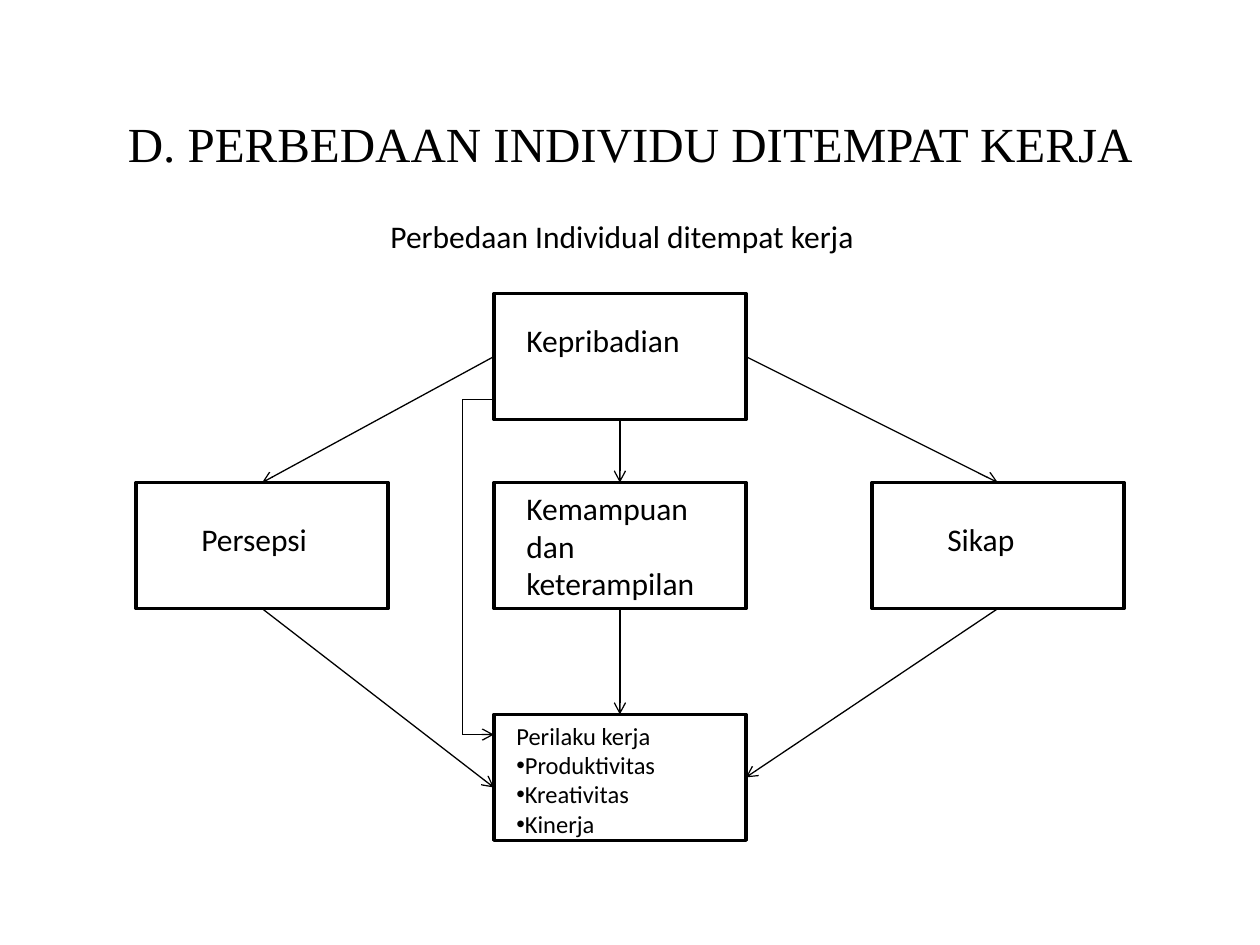
"""Build a slide on individual differences at work."""
from typing import NamedTuple, Optional

from lxml.etree import SubElement as Sub
from pptx import Presentation as Deck
from pptx.dml.color import RGBColor as Color
from pptx.enum.shapes import MSO_CONNECTOR as Wire, MSO_SHAPE as Form
from pptx.enum.text import MSO_ANCHOR as Anchor, PP_ALIGN as Align
from pptx.oxml.ns import qn
from pptx.util import Inches, Pt

BLACK = Color(0, 0, 0)
WHITE = Color(255, 255, 255)
WIDE, HIGH = 2, 1
TOP, LEFT, LOW, RIGHT = range(4)


class Box(NamedTuple):
    x: float
    y: float


class Label(NamedTuple):
    x: float
    y: float
    width: float
    height: float
    lines: tuple[str, ...]
    size: int = 18


class End(NamedTuple):
    x: float
    y: float
    box: Optional[str] = None
    side: int = TOP


class Link(NamedTuple):
    start: End
    stop: End
    arrow: bool = True


BOXES = {
    "trait": Box(3.92, 2.33),
    "view": Box(1.08, 3.83),
    "skill": Box(3.92, 3.83),
    "stance": Box(6.92, 3.83),
    "work": Box(3.92, 5.67),
}
LABELS = (
    Label(3, 1.67, 4.08, 0.4, ("Perbedaan Individual ditempat kerja",)),
    Label(4.08, 2.5, 1.67, 0.4, ("Kepribadian",)),
    Label(4.08, 3.83, 1.67, 1.01, ("Kemampuan dan keterampilan",)),
    Label(1.5, 4.08, 1.5, 0.4, ("Persepsi",)),
    Label(7.42, 4.08, 1.5, 0.4, ("Sikap",)),
    Label(4, 5.67, 1.83, 1.04,
          ("Perilaku kerja", "Produktivitas", "Kreativitas", "Kinerja"), 14),
)


def side(name: str, edge: int) -> End:
    box = BOXES[name]
    shift = ((WIDE / 2, 0), (0, HIGH / 2), (WIDE / 2, HIGH), (WIDE, HIGH / 2))
    across, down = shift[edge]
    return End(box.x + across, box.y + down, name, edge)


BEND, EDGE = 3.67, BOXES["work"].x
LINKS = (
    Link(side("trait", LEFT), side("view", TOP)),
    Link(side("trait", RIGHT), side("stance", TOP)),
    Link(side("trait", LOW), side("skill", TOP)),
    Link(side("skill", LOW), side("work", TOP)),
    Link(side("view", LOW), End(EDGE, 6.25)),
    Link(side("stance", LOW), side("work", RIGHT)),
    Link(End(BEND, 5.83), End(EDGE, 5.83)),
    Link(End(BEND, 3.17), End(BEND, 5.83), False),
    Link(End(BEND, 3.17), End(EDGE, 3.17), False),
)


def write(para, text: str, size: int, font: str) -> None:
    run = para.add_run()
    run.text = text
    run.font.size = Pt(size)
    run.font.name = font
    run.font.color.rgb = BLACK


def draw_box(slide, box: Box):
    shape = slide.shapes.add_shape(
        Form.RECTANGLE, *map(Inches, (box.x, box.y, WIDE, HIGH)))
    shape.shadow.inherit = False
    shape.fill.solid()
    shape.fill.fore_color.rgb = WHITE
    shape.line.color.rgb = BLACK
    shape.line.width = Pt(2)
    return shape


def draw_label(slide, label: Label) -> None:
    frame = slide.shapes.add_textbox(*map(Inches, label[:4])).text_frame
    frame.word_wrap = True
    for rank, text in enumerate(label.lines):
        para = frame.add_paragraph() if rank else frame.paragraphs[0]
        if rank:
            props = para._p.get_or_add_pPr()
            Sub(props, qn("a:buFont"), typeface="Arial")
            Sub(props, qn("a:buChar"), char="•")
        write(para, text, label.size, "Calibri")


def draw_link(slide, link: Link, shapes: dict) -> None:
    start, stop = link.start, link.stop
    line = slide.shapes.add_connector(
        Wire.STRAIGHT, *map(Inches, (start.x, start.y, stop.x, stop.y)))
    if start.box:
        line.begin_connect(shapes[start.box], start.side)
    if stop.box:
        line.end_connect(shapes[stop.box], stop.side)
    line.line.color.rgb = BLACK
    line.line.width = Pt(0.75)
    if link.arrow:
        Sub(line.line._get_or_add_ln(), qn("a:tailEnd"), type="arrow")
    Sub(line._element.spPr, qn("a:effectLst"))


def main() -> None:
    deck = Deck()
    deck.slide_width, deck.slide_height = Inches(10), Inches(7.5)
    slide = deck.slides.add_slide(deck.slide_layouts[5])
    title = slide.shapes.title
    title.left, title.top = Inches(0.75), Inches(0.33)
    title.width, title.height = Inches(8.5), Inches(1.61)
    frame = title.text_frame
    frame.vertical_anchor = Anchor.MIDDLE
    para = frame.paragraphs[0]
    para.alignment = Align.CENTER
    write(para, "D. PERBEDAAN INDIVIDU DITEMPAT KERJA", 28, "Times New Roman")
    shapes = {name: draw_box(slide, box) for name, box in BOXES.items()}
    for label in LABELS:
        draw_label(slide, label)
    for link in LINKS:
        draw_link(slide, link, shapes)
    deck.save("out.pptx")


if __name__ == "__main__":
    main()
